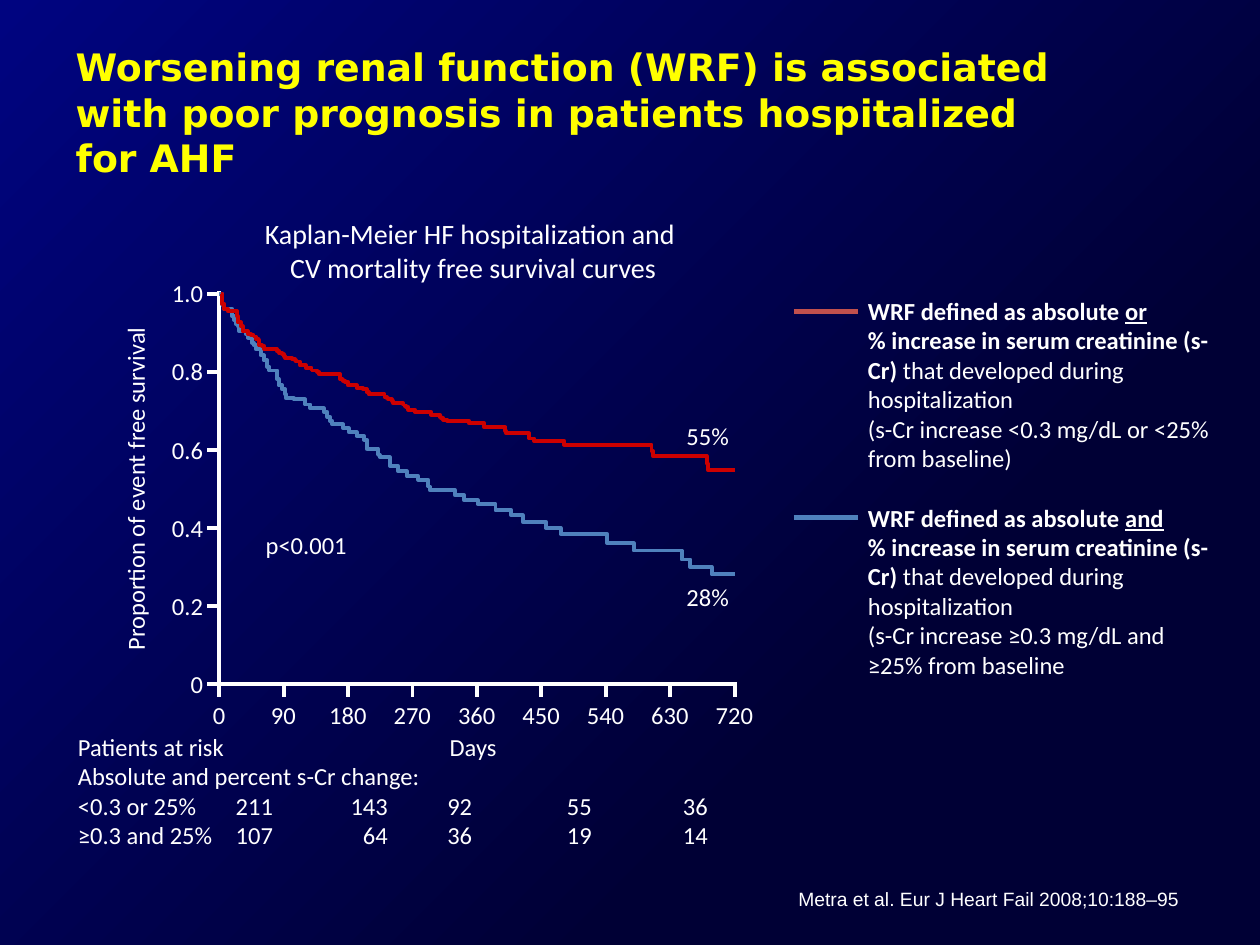
from lxml.etree import SubElement
from pptx import Presentation
from pptx.dml.color import RGBColor
from pptx.enum.shapes import MSO_CONNECTOR as Connector
from pptx.enum.text import MSO_ANCHOR as Anchor, PP_ALIGN as Align
from pptx.oxml.ns import qn
from pptx.util import Inches, Pt

COLORS = {"white": "FFFFFF", "title": "FFFF00", "red": "CC0000", "blue": "4F81BD",
          "key_red": "C0504D", "navy": "000480", "dark": "000035"}

TITLE = ("Worsening renal function (WRF) is associated with poor prognosis "
         "in patients hospitalized for AHF")
CHART_TITLE = "Kaplan-Meier HF hospitalization and \vCV mortality free survival curves"
SOURCE = "Metra et al. Eur J Heart Fail 2008;10:188–95"

# Kaplan-Meier data: at each day, survival drops to the given percentage
AND_GROUP = [
    (4, 97.1), (7, 96.1), (18, 94.2), (21, 93.2), (23, 92.3), (26, 91.6), (28, 90.3),
    (37, 89.7), (40, 88.7), (46, 87.4), (48, 86.8), (51, 85.8), (58, 84.2), (62, 82.9),
    (67, 81.3), (70, 80.3), (81, 78.1), (83, 76.5), (88, 75.5), (92, 74.2), (93, 73.2),
    (104, 72.9), (120, 71.6), (127, 70.6), (146, 69.7), (151, 68.4), (155, 67.4),
    (158, 66.5), (173, 65.5), (181, 64.5), (192, 63.5), (202, 62.6), (206, 60.3),
    (222, 58.7), (224, 58.1), (238, 57.1), (239, 55.8), (250, 54.5), (262, 53.2),
    (278, 52.3), (292, 50.6), (294, 49.7), (329, 48.4), (342, 47.1), (361, 46.1),
    (386, 44.5), (408, 43.2), (424, 41.6), (456, 40), (477, 38.4), (542, 36.1),
    (579, 34.2), (646, 31.9), (658, 30), (688, 28.1)]
OR_GROUP = [
    (4, 97.4), (7, 96.1), (12, 95.5), (25, 94.2), (26, 92.6), (30, 91.6), (33, 90.3),
    (40, 89.7), (44, 89.4), (48, 89), (51, 88.4), (55, 88.1), (56, 86.8), (60, 86.5),
    (63, 85.8), (81, 85.2), (84, 84.8), (88, 84.5), (90, 83.9), (92, 83.5), (102, 83.2),
    (106, 82.9), (107, 82.6), (113, 81.6), (121, 81), (129, 80.3), (137, 80),
    (139, 79.4), (169, 78.1), (173, 77.7), (176, 77.4), (180, 76.5), (192, 75.8),
    (201, 75.5), (206, 74.8), (209, 74.2), (231, 73.5), (234, 73.2), (236, 72.9),
    (241, 72.6), (243, 71.9), (257, 71.6), (259, 71.3), (261, 71), (264, 70.3),
    (273, 69.7), (296, 69), (308, 68.4), (310, 68.1), (313, 67.7), (319, 67.4),
    (349, 66.8), (370, 65.8), (400, 64.8), (401, 64.2), (433, 62.9), (440, 62.3),
    (482, 61.3), (604, 59.7), (606, 58.4), (681, 56.5), (683, 54.8)]

# Each curve: first day, steps, colour, offset of its end label from the curve
CURVES = [(0, AND_GROUP, "blue", 0.01), (2, OR_GROUP, "red", -0.44)]

# Legend: top of text, key colour, joining word, closing line
LEGEND = [
    (2.3, "key_red", "or", "(s-Cr increase <0.3 mg/dL or <25% from baseline)"),
    (3.94, "blue", "and", "(s-Cr increase ≥0.3 mg/dL and ≥25% from baseline")]

RISK_HEADINGS = ["Patients at risk", "Absolute and percent s-Cr change:"]
RISK_ROWS = [["<0.3 or 25%", "211", "143", "92", "55", "36"],
             ["≥0.3 and 25%", "107", "64", "36", "19", "14"]]
RISK_TABS = [(1.4, "ctr"), (2.46, "r"), (3.03, "ctr"), (3.98, "ctr"), (4.9, "ctr")]

# Plot area in inches, and the scales it carries
PLOT_LEFT, PLOT_TOP, PLOT_WIDTH, PLOT_HEIGHT = 1.74, 2.33, 4.09, 3.1
PLOT_BOTTOM = PLOT_TOP + PLOT_HEIGHT
LAST_DAY, DAY_STEP = 720, 90
FULL_SURVIVAL, SURVIVAL_STEP = 100, 20
OVERHANG, TICK = 0.02, 0.1
LABEL_HEIGHT, INSET = 0.34, 0.1


def day_x(day):
    return PLOT_LEFT + PLOT_WIDTH * day / LAST_DAY


def survival_y(percent):
    return PLOT_BOTTOM - PLOT_HEIGHT * percent / FULL_SURVIVAL


def color(name):
    return RGBColor.from_string(COLORS[name])


def style_runs(para, size=14, font="Calibri", tint="white"):
    for span in para.runs:
        span.font.size, span.font.name = Pt(size), font
        span.font.color.rgb = color(tint)


def add_text(slide, lines, left, top, width, height=LABEL_HEIGHT, size=14,
             align=Align.LEFT, font="Calibri", wrap=False):
    box = slide.shapes.add_textbox(*map(Inches, (left, top, width, height)))
    frame = box.text_frame
    frame.word_wrap = wrap
    for i, line in enumerate(lines):
        para = frame.add_paragraph() if i else frame.paragraphs[0]
        para.text, para.alignment = line, align
        style_runs(para, size, font)
    return box


def set_tabs(para, tabs):
    tab_list = SubElement(para._p.get_or_add_pPr(), qn("a:tabLst"))
    for position, kind in tabs:
        SubElement(tab_list, qn("a:tab"), pos=str(Inches(position)), algn=kind)


def add_line(slide, start, end, tint="white", weight=2.25):
    line = slide.shapes.add_connector(Connector.STRAIGHT, *map(Inches, (*start, *end)))
    line.line.color.rgb, line.line.width = color(tint), Pt(weight)
    SubElement(line._element.spPr, qn("a:effectLst"))


def add_path(slide, points, tint):
    first, *rest = [(Inches(x), Inches(y)) for x, y in points]
    builder = slide.shapes.build_freeform(*first)
    builder.add_line_segments(rest, close=False)
    path = builder.convert_to_shape()
    path.shadow.inherit = False
    path.fill.background()
    path.line.color.rgb, path.line.width = color(tint), Pt(2.25)


def set_background(slide):
    fill = slide.background.fill
    fill.gradient()
    fill.gradient_angle = 315
    for stop, name, position in zip(fill.gradient_stops, ("navy", "dark"), (0, 0.7)):
        stop.color.rgb, stop.position = color(name), position


def set_title(slide):
    title = slide.shapes.title
    title.left, title.top, title.width, title.height = map(Inches, (0.5, 0.3, 8.11, 1.25))
    frame = title.text_frame
    frame.text, frame.vertical_anchor = TITLE, Anchor.MIDDLE
    frame.margin_bottom = Inches(0.12)
    para = frame.paragraphs[0]
    para.alignment = Align.LEFT
    style_runs(para, 21.6, "DejaVu Sans", "title")
    para.runs[0].font.bold = True


def add_axes(slide):
    add_path(slide, [(PLOT_LEFT, PLOT_TOP - OVERHANG), (PLOT_LEFT, PLOT_BOTTOM),
                     (day_x(LAST_DAY) + OVERHANG, PLOT_BOTTOM)], "white")
    # Survival axis
    for percent in range(0, FULL_SURVIVAL + 1, SURVIVAL_STEP):
        y = survival_y(percent)
        label = f"{percent / 100:.1f}" if percent else "0"
        add_line(slide, (PLOT_LEFT, y), (PLOT_LEFT - TICK, y))
        add_text(slide, [label], 1.26, y - LABEL_HEIGHT / 2, 0.45, align=Align.RIGHT)
    name = add_text(slide, ["Proportion of event free survival"], -0.32, 3.71, 2.79,
                    align=Align.CENTER)
    name.rotation = 270
    # Day axis: one line of labels, each centred on its tick by a tab
    days = range(0, LAST_DAY + 1, DAY_STEP)
    for day in days:
        add_line(slide, (day_x(day), PLOT_BOTTOM), (day_x(day), PLOT_BOTTOM + TICK))
    left = 1.58
    labels = add_text(slide, ["".join(f"\t{day}" for day in days)], left, 5.51, 4.57)
    set_tabs(labels.text_frame.paragraphs[0],
             [(day_x(day) - left - INSET, "ctr") for day in days])
    add_text(slide, ["Days"], 3.47, 5.76, 0.58)


def add_curve(slide, first_day, steps, tint, label_offset):
    percent = FULL_SURVIVAL
    points = [(first_day, percent)]
    for day, lower in steps:
        points += [(day, percent), (day, lower)]
        percent = lower
    points.append((LAST_DAY, percent))
    add_path(slide, [(day_x(day), survival_y(level)) for day, level in points], tint)
    add_text(slide, [f"{percent:.0f}%"], 5.35, survival_y(percent) + label_offset, 0.54)


def add_legend_entry(slide, top, tint, word, closing):
    box = add_text(slide, [""], 6.79, top, 2.98, 1.52, wrap=True)
    para = box.text_frame.paragraphs[0]
    lines = [[("WRF defined as absolute ", True, False), (word, True, True)],
             [("% increase in serum creatinine (s-Cr) ", True, False),
              ("that developed during hospitalization", False, False)],
             [(closing, False, False)]]
    for i, line in enumerate(lines):
        if i:
            para.add_line_break()
        for text, bold, underline in line:
            span = para.add_run()
            span.text, span.font.bold, span.font.underline = text, bold, underline
    style_runs(para)
    key_y = top + LABEL_HEIGHT / 2
    add_line(slide, (6.3, key_y), (6.81, key_y), tint, 3)


def add_risk_table(slide):
    rows = ["\t".join(row) for row in RISK_ROWS]
    box = add_text(slide, RISK_HEADINGS + rows, 0.52, 5.76, 5.91, 1.04, wrap=True)
    for para in box.text_frame.paragraphs[len(RISK_HEADINGS):]:
        set_tabs(para, RISK_TABS)


def main():
    deck = Presentation()
    deck.slide_width, deck.slide_height = Inches(10), Inches(7.5)
    slide = deck.slides.add_slide(deck.slide_layouts[5])
    set_background(slide)
    set_title(slide)
    add_text(slide, [CHART_TITLE], 1.98, 1.67, 3.55, 0.64, 16, Align.CENTER)
    add_axes(slide)
    for curve in CURVES:
        add_curve(slide, *curve)
    add_text(slide, ["p<0.001"], 2.01, 4.16, 0.85)
    for entry in LEGEND:
        add_legend_entry(slide, *entry)
    add_risk_table(slide)
    add_text(slide, [SOURCE], 2.33, 6.99, 7.13, 0.29, 11, Align.RIGHT, "Arial", True)
    deck.save("out.pptx")


if __name__ == "__main__":
    main()
